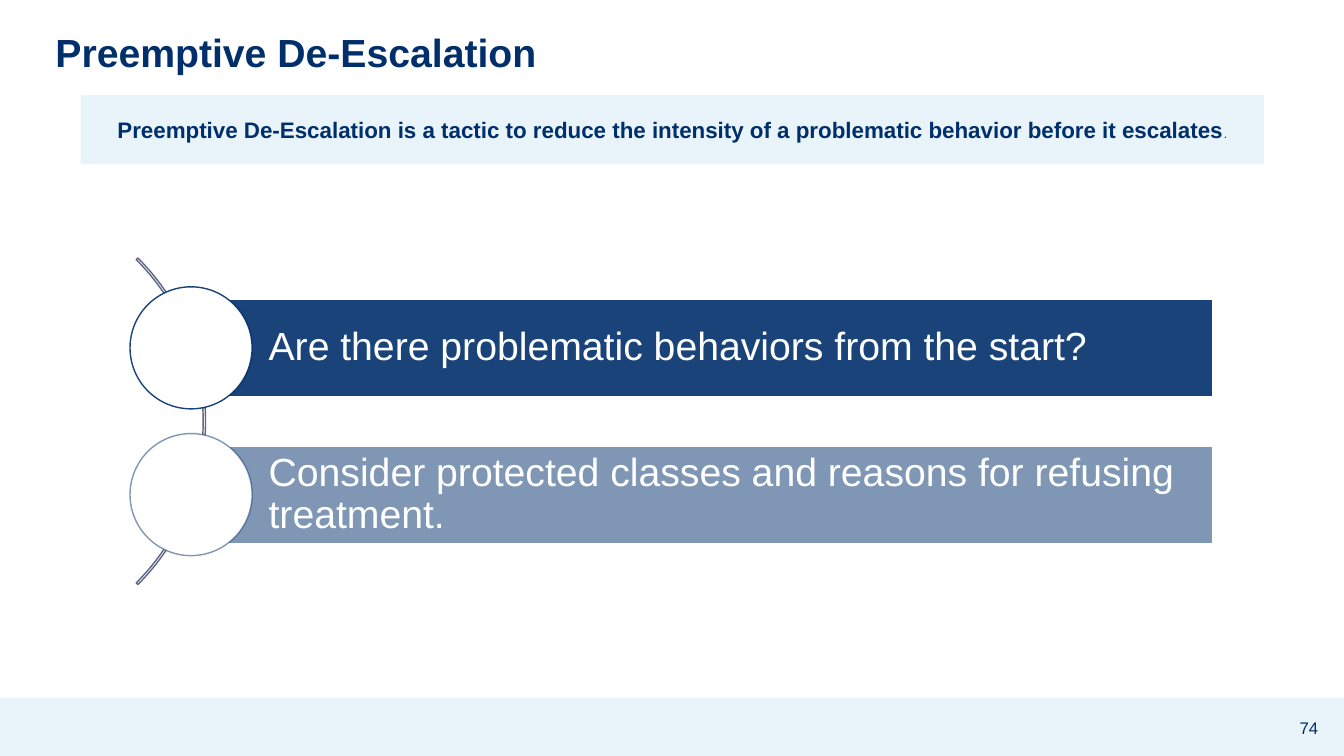
from pptx import Presentation
from pptx.dml.color import RGBColor
from pptx.enum.shapes import MSO_SHAPE as Preset
from pptx.enum.text import MSO_ANCHOR as Anchor, PP_ALIGN as Align, MSO_AUTO_SIZE as AutoSize
from pptx.oxml.ns import qn
from pptx.util import Pt
from lxml.etree import SubElement

COLORS = {"navy": "002F6B", "pale": "E8F4FA", "white": "FFFFFF", "arc": "5E6585"}
QUESTIONS = [
    ("Are there problematic behaviors from the start?", 90),
    ("Consider protected classes and reasons for refusing treatment.", 50),
]


class SlideBuilder:
    """Holds the style and the current slide."""

    font = "Arial"

    def __init__(self, slide):
        self.slide = slide

    def paint(self, color_format, name, opacity=100):
        color_format.rgb = RGBColor.from_string(COLORS[name])
        if opacity < 100:
            color = color_format._xFill.find(qn("a:srgbClr"))
            SubElement(color, qn("a:alpha")).set("val", str(opacity * 1000))

    def fill(self, shape, name, opacity=100):
        shape.fill.solid()
        self.paint(shape.fill.fore_color, name, opacity)

    def place(self, shape, box):
        shape.left, shape.top, shape.width, shape.height = map(Pt, box)

    def shape(self, preset, box, fill=None, line=None, fill_opacity=100, line_opacity=100):
        shape = self.slide.shapes.add_shape(preset, *map(Pt, box))
        shape.shadow.inherit = False
        if fill:
            self.fill(shape, fill, fill_opacity)
        else:
            shape.fill.background()
        if line:
            shape.line.width = Pt(1)
            shape.line.fill.solid()
            self.paint(shape.line.fill.fore_color, line, line_opacity)
        else:
            shape.line.fill.background()
        return shape

    def set_text(self, shape, text, size, color="navy", bold=False, align=Align.LEFT,
                 spacing=1.0, margins=(7.2, 3.6, 7.2, 3.6)):
        frame = shape.text_frame
        frame.text = text
        frame.word_wrap = True
        frame.auto_size = AutoSize.NONE
        frame.vertical_anchor = Anchor.MIDDLE
        (frame.margin_left, frame.margin_top,
         frame.margin_right, frame.margin_bottom) = map(Pt, margins)
        paragraph = frame.paragraphs[0]
        paragraph.alignment = align
        paragraph.line_spacing = spacing
        paragraph.space_before = Pt(0)
        for run in paragraph.runs:
            self.style(run, size, color, bold)
        return paragraph

    def style(self, run, size, color, bold=False):
        run.font.name = self.font
        run.font.size = Pt(size)
        run.font.bold = bold
        run.font.color.rgb = RGBColor.from_string(COLORS[color])

    def title(self, text, box):
        title = self.slide.shapes.title
        self.place(title, box)
        self.set_text(title, text, 28, bold=True, spacing=0.9)

    def definition(self, text, box):
        body = self.slide.placeholders[1]
        self.place(body, box)
        self.fill(body, "pale")
        paragraph = self.set_text(body, text, 16, bold=True, align=Align.CENTER,
                                  margins=(14.4, 3.6, 14.4, 3.6))
        properties = paragraph._p.get_or_add_pPr()
        properties.set("marL", "0")
        properties.set("indent", "0")
        SubElement(properties, qn("a:buNone"))
        period = paragraph.add_run()
        period.text = "."
        self.style(period, 8.8, "navy")

    def page_number(self, text, box):
        number = self.slide.shapes.add_textbox(*map(Pt, box))
        self.set_text(number, text, 12, align=Align.CENTER)

    def arc(self, box):
        arc = self.shape(Preset.BLOCK_ARC, box, line="arc")
        for index, value in enumerate((189, 27, 0.005)):
            arc.adjustments[index] = value

    def question(self, text, opacity, left, center, width):
        height, diameter = 69.7, 87.2
        bar = self.shape(Preset.RECTANGLE, (left, center - height / 2, width, height),
                         "navy", "white", fill_opacity=opacity)
        self.set_text(bar, text, 28, "white", spacing=0.9, margins=(55.4, 5.8, 5.8, 5.8))
        self.shape(Preset.OVAL,
                   (left - diameter / 2, center - diameter / 2, diameter, diameter),
                   "white", "navy", line_opacity=opacity)


def main():
    presentation = Presentation()
    presentation.slide_width, presentation.slide_height = Pt(960), Pt(540)
    slide = presentation.slides.add_slide(presentation.slide_layouts[1])
    builder = SlideBuilder(slide)

    # Footer band and page number
    builder.shape(Preset.RECTANGLE, (0, 498.4, 960, 41.6), "pale")
    builder.page_number("74", (913, 505.4, 44, 28.8))

    # Title and definition
    builder.title("Preemptive De-Escalation", (32.4, 10.8, 870.5, 56.2))
    builder.definition(
        "Preemptive De-Escalation is a tactic to reduce the intensity of a "
        "problematic behavior before it escalates", (57.6, 68, 845.3, 49))

    # Questions strung along the arc
    builder.arc((-183, 136, 329.8, 329.8))
    for index, (text, opacity) in enumerate(QUESTIONS):
        builder.question(text, opacity, left=136.5, center=248.5 + 104.8 * index, width=730)

    presentation.save("out.pptx")


if __name__ == "__main__":
    main()
